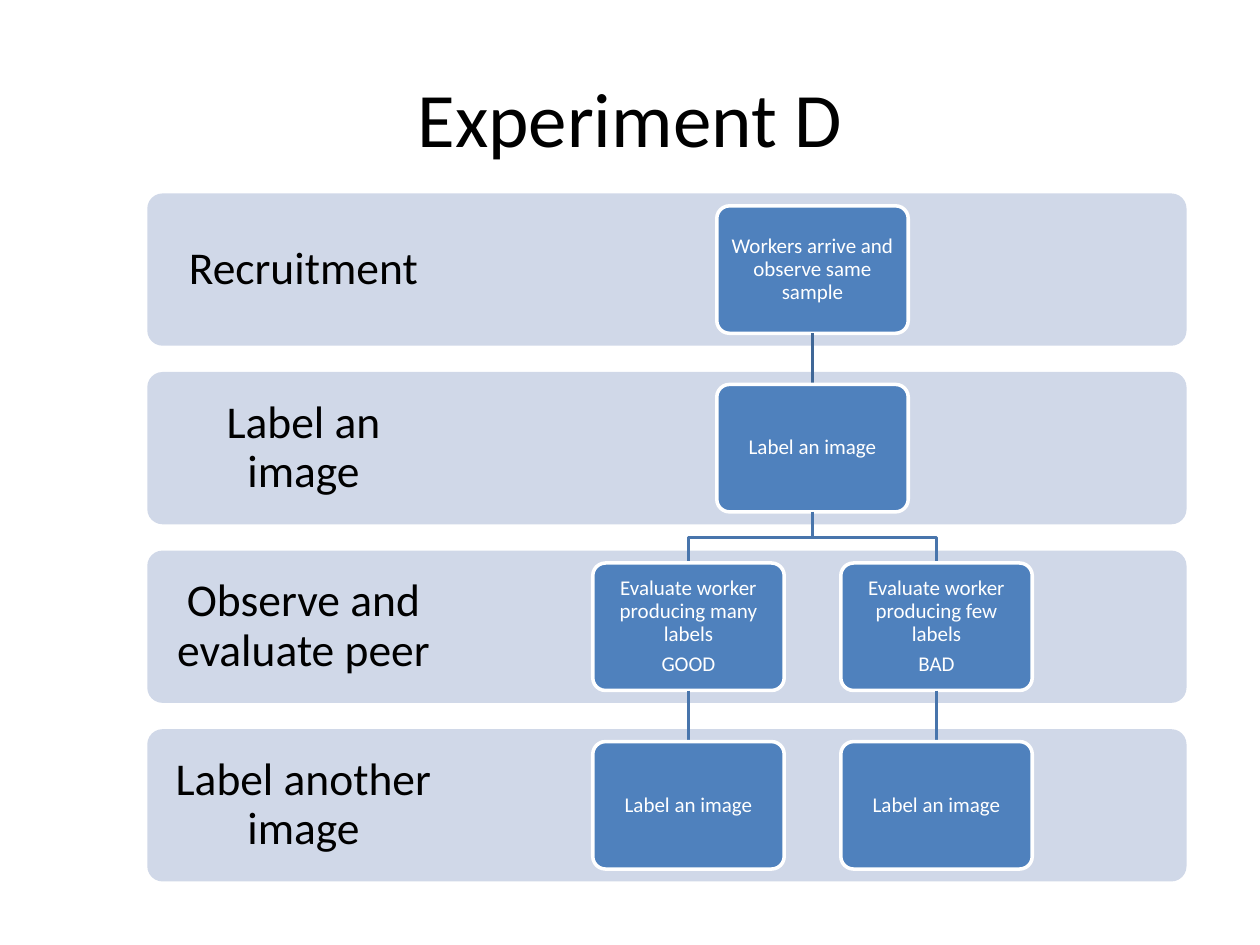
import pptx
import pptx.dml.color
import pptx.enum.shapes
import pptx.enum.text
import pptx.oxml.ns
import pptx.util
from lxml import etree

Cm = pptx.util.Cm
Pt = pptx.util.Pt

COLOURS = {
    "text": "000000",
    "band": "D0D8E8",
    "box": "4F81BD",
    "box_text": "FFFFFF",
    "box_border": "FFFFFF",
    "root_link": "3F6797",
    "link": "4875AC",
}

BAND_LEFT, BAND_TOP, BAND_WIDTH, BAND_HEIGHT = 2.97, 3.9, 20.95, 3.07
LABEL_WIDTH = 6.3
ROW_PITCH = 3.6
BOX_WIDTH, BOX_HEIGHT = 3.86, 2.57
BOX_INSET = (BAND_HEIGHT - BOX_HEIGHT) / 2
TREE_CENTRE, BRANCH_OFFSET = 16.38, 2.5

STAGES = ["Recruitment", "Label an image", "Observe and evaluate peer", "Label another image"]

# Each node: paragraphs, horizontal offset from its parent, children
TREE = (["Workers arrive and observe same sample"], 0, [
    (["Label an image"], 0, [
        (["Evaluate worker producing many labels", "GOOD"], -BRANCH_OFFSET,
         [(["Label an image"], 0, [])]),
        (["Evaluate worker producing few labels", "BAD"], BRANCH_OFFSET,
         [(["Label an image"], 0, [])]),
    ]),
])


def rgb(name):
    return pptx.dml.color.RGBColor.from_string(COLOURS[name])


class SlideBuilder:
    """Holds the text style and the slide being drawn; lengths are centimetres."""

    font = "Calibri"
    line_width = Pt(2)

    def __init__(self, slide):
        self.slide = slide

    def add_text(self, shape, paragraphs, size, colour, inset, line_spacing=0.9, space_after=0.35):
        """Centre the paragraphs in the shape; space_after is a share of the size."""
        frame = shape.text_frame
        frame.word_wrap = True
        frame.vertical_anchor = pptx.enum.text.MSO_ANCHOR.MIDDLE
        frame.margin_left = frame.margin_right = Cm(inset)
        frame.margin_top = frame.margin_bottom = Cm(inset)
        for index, text in enumerate(paragraphs):
            paragraph = frame.add_paragraph() if index else frame.paragraphs[0]
            paragraph.alignment = pptx.enum.text.PP_ALIGN.CENTER
            paragraph.line_spacing = line_spacing
            paragraph.space_after = Pt(size * space_after)
            run = paragraph.add_run()
            run.text = text
            run.font.name = self.font
            run.font.size = Pt(size)
            run.font.color.rgb = rgb(colour)

    def text_box(self, left, top, width, height, text, size, inset, **spacing):
        shape = self.slide.shapes.add_textbox(Cm(left), Cm(top), Cm(width), Cm(height))
        self.add_text(shape, [text], size, "text", inset, **spacing)

    def rounded(self, left, top, width, height, fill, border=None):
        shape = self.slide.shapes.add_shape(
            pptx.enum.shapes.MSO_SHAPE.ROUNDED_RECTANGLE,
            Cm(left), Cm(top), Cm(width), Cm(height))
        shape.adjustments[0] = 0.1
        shape.shadow.inherit = False
        shape.fill.solid()
        shape.fill.fore_color.rgb = rgb(fill)
        if border:
            self.outline(shape, border)
        else:
            shape.line.fill.background()
        return shape

    def outline(self, shape, colour):
        shape.line.color.rgb = rgb(colour)
        shape.line.width = self.line_width

    def band(self, row, label):
        top = BAND_TOP + row * ROW_PITCH
        self.rounded(BAND_LEFT, top, BAND_WIDTH, BAND_HEIGHT, "band")
        self.text_box(BAND_LEFT, top, LABEL_WIDTH, BAND_HEIGHT, label, 26, 0.5)

    def box(self, centre, top, paragraphs):
        shape = self.rounded(centre - BOX_WIDTH / 2, top, BOX_WIDTH, BOX_HEIGHT,
                             "box", "box_border")
        self.add_text(shape, paragraphs, 12, "box_text", 0.2)

    def straight_link(self, x, top, bottom, colour):
        connector = self.slide.shapes.add_connector(
            pptx.enum.shapes.MSO_CONNECTOR.STRAIGHT, Cm(x), Cm(top), Cm(x), Cm(bottom))
        self.outline(connector, colour)
        properties = connector._element.spPr
        etree.SubElement(properties, pptx.oxml.ns.qn("a:effectLst"))

    def elbow_link(self, start, top, end, bottom, colour):
        middle = (top + bottom) / 2
        builder = self.slide.shapes.build_freeform(Cm(start), Cm(top))
        corners = [(start, middle), (end, middle), (end, bottom)]
        builder.add_line_segments([(Cm(x), Cm(y)) for x, y in corners], close=False)
        shape = builder.convert_to_shape()
        shape.fill.background()
        shape.shadow.inherit = False
        self.outline(shape, colour)

    def tree(self, node, centre, row=0):
        """Draw a node, then each link followed by the branch it leads to."""
        paragraphs, _, children = node
        top = BAND_TOP + BOX_INSET + row * ROW_PITCH
        bottom, next_top = top + BOX_HEIGHT, top + ROW_PITCH
        self.box(centre, top, paragraphs)
        colour = "link" if row else "root_link"
        for child in children:
            child_centre = centre + child[1]
            if child[1]:
                self.elbow_link(centre, bottom, child_centre, next_top, colour)
            else:
                self.straight_link(centre, bottom, next_top, colour)
            self.tree(child, child_centre, row + 1)


def main():
    presentation = pptx.Presentation()
    presentation.slide_width = Cm(25.4)
    presentation.slide_height = Cm(19.05)
    slide = presentation.slides.add_slide(presentation.slide_layouts[6])
    builder = SlideBuilder(slide)
    builder.text_box(1.27, 0.76, 22.86, 3.18, "Experiment D", 44, 0.25,
                     line_spacing=1.0, space_after=0)
    for row, label in enumerate(STAGES):
        builder.band(row, label)
    builder.tree(TREE, TREE_CENTRE)
    presentation.save("out.pptx")


if __name__ == "__main__":
    main()
